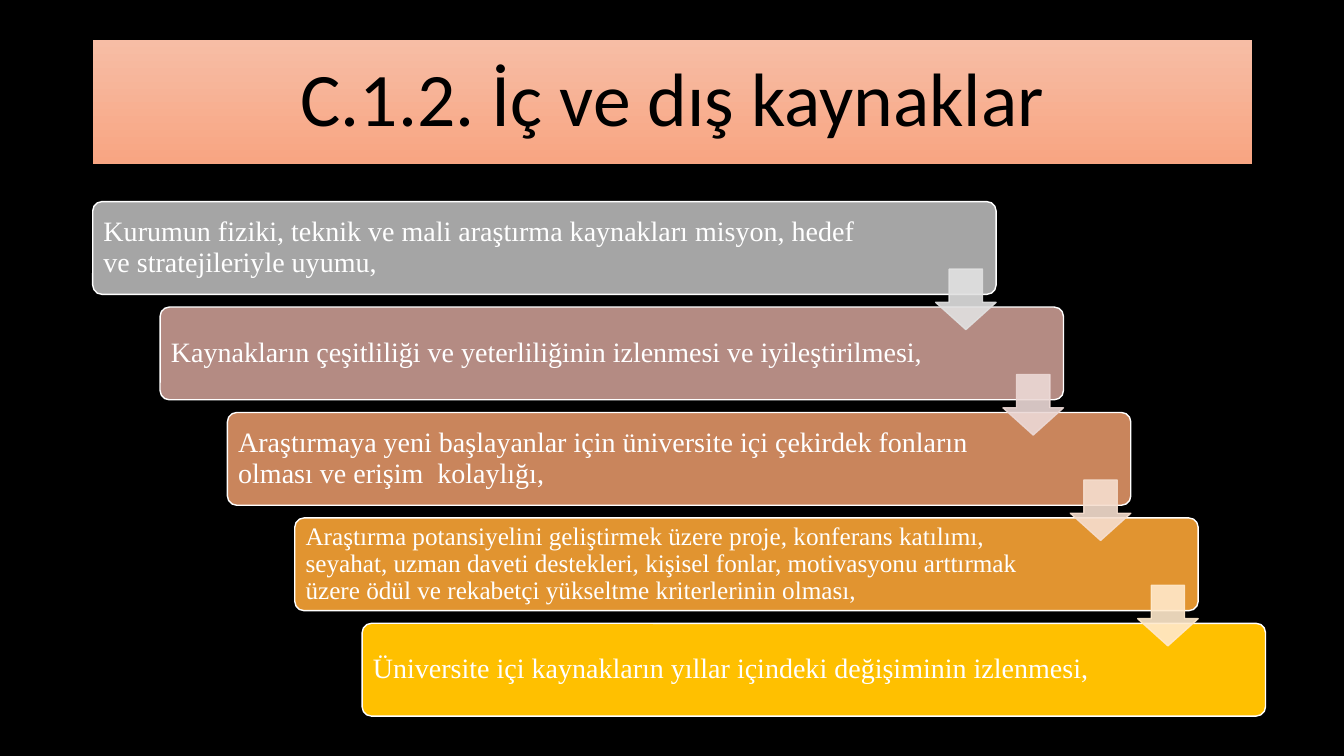
"""Build a slide with a staircase of five cards linked by down arrows."""
from lxml.etree import SubElement
from pptx import Presentation
from pptx.dml.color import RGBColor
from pptx.enum.shapes import MSO_SHAPE as Shape
from pptx.enum.text import MSO_ANCHOR as Anchor, MSO_AUTO_SIZE as AutoSize, PP_ALIGN as Align
from pptx.oxml.ns import qn
from pptx.util import Inches, Pt

TITLE = "C.1.2. İç ve dış kaynaklar"
CARDS = [
    ("Kurumun fiziki, teknik ve mali araştırma kaynakları misyon, hedef ve stratejileriyle uyumu,", "body"),
    ("Kaynakların çeşitliliği ve yeterliliğinin izlenmesi ve iyileştirilmesi,", "body"),
    ("Araştırmaya yeni başlayanlar için üniversite içi çekirdek fonların olması ve erişim  kolaylığı,", "body"),
    ("Araştırma potansiyelini geliştirmek üzere proje, konferans katılımı, seyahat, uzman daveti destekleri, "
     "kişisel fonlar, motivasyonu arttırmak üzere ödül ve rekabetçi yükseltme kriterlerinin olması,", "small"),
    ("Üniversite içi kaynakların yıllar içindeki değişiminin izlenmesi,", "body"),
]
THEME = {
    "background": "000000", "title_text": "000000", "card_text": "FFFFFF", "outline": "FFFFFF",
    "title_gradient": ("F7BDA5", "F8A582"),
    "cards": ("A5A5A5", "B48B83", "C9855C", "E19430", "FFC000"),
    "arrows": ("E1E1E1", "ECD9D6", "F6DECF", "FFE9CB"),
    "arrow_opacity": 90,
    "title_font": "Calibri", "card_font": "Times New Roman",
    "sizes": {"title": 54, "body": 20, "small": 18},
}
SLIDE_WIDTH, SLIDE_HEIGHT = 13.33, 7.5
TITLE_BOX = (0.92, 0.4, 11.5, 1.23)
LEFT, TOP = 0.92, 2
CARD_WIDTH, CARD_HEIGHT = 8.96, 0.92
STEP_X, STEP_Y = 0.668, 1.046
ARROW_SIZE, ARROW_DROP = 0.6, 0.67
CARD_MARGINS = {"margin_left": 0.08, "margin_right": 1.34, "margin_top": 0.05, "margin_bottom": 0.05}


def rgb(value):
    """Turn a hex string into a colour."""
    return RGBColor.from_string(value)


def apply_format(target, values):
    """Set every attribute named in a dict."""
    for name, value in values.items():
        setattr(target, name, value)


def write_text(shape, text, size, font, color, align, margins):
    """Put one formatted paragraph into a shape."""
    frame = shape.text_frame
    frame.text = text
    apply_format(frame, {"word_wrap": True, "auto_size": AutoSize.NONE, "vertical_anchor": Anchor.MIDDLE})
    apply_format(frame, {name: Inches(value) for name, value in margins.items()})
    paragraph = frame.paragraphs[0]
    apply_format(paragraph, {"alignment": align, "line_spacing": 0.9})
    run_font = paragraph.runs[0].font
    apply_format(run_font, {"size": Pt(THEME["sizes"][size]), "name": font})
    run_font.color.rgb = rgb(color)


def add_block(slide, kind, box, adjustments, fill, line):
    """Add a filled and outlined preset shape."""
    shape = slide.shapes.add_shape(kind, *map(Inches, box))
    for index, value in enumerate(adjustments):
        shape.adjustments[index] = value
    shape.shadow.inherit = False
    shape.fill.solid()
    shape.fill.fore_color.rgb = rgb(fill)
    shape.line.color.rgb = rgb(line)
    shape.line.width = Pt(1)
    return shape


def add_title(slide):
    """Format the title placeholder as a gradient banner."""
    title = slide.shapes.title
    apply_format(title, dict(zip(("left", "top", "width", "height"), map(Inches, TITLE_BOX))))
    title.fill.gradient()
    title.fill.gradient_angle = 270
    for stop, color in zip(title.fill.gradient_stops, THEME["title_gradient"]):
        stop.color.rgb = rgb(color)
    write_text(title, TITLE, "title", THEME["title_font"], THEME["title_text"], Align.CENTER, {})


def add_cards(slide):
    """Add the cards, each one step right of and below the last."""
    for index, ((text, size), fill) in enumerate(zip(CARDS, THEME["cards"])):
        box = (LEFT + index * STEP_X, TOP + index * STEP_Y, CARD_WIDTH, CARD_HEIGHT)
        card = add_block(slide, Shape.ROUNDED_RECTANGLE, box, [0.1], fill, THEME["outline"])
        write_text(card, text, size, THEME["card_font"], THEME["card_text"], Align.LEFT, CARD_MARGINS)


def add_arrows(slide):
    """Add a translucent arrow at the right end of every card but the last."""
    for index, color in enumerate(THEME["arrows"]):
        left = LEFT + index * STEP_X + CARD_WIDTH - ARROW_SIZE
        top = TOP + index * STEP_Y + ARROW_DROP
        arrow = add_block(slide, Shape.DOWN_ARROW, (left, top, ARROW_SIZE, ARROW_SIZE), [0.55, 0.45], color, color)
        for element in arrow.element.spPr.iter(qn("a:srgbClr")):
            SubElement(element, qn("a:alpha"), val=str(THEME["arrow_opacity"] * 1000))


def main():
    """Build and save the slide."""
    presentation = Presentation()
    apply_format(presentation, {"slide_width": Inches(SLIDE_WIDTH), "slide_height": Inches(SLIDE_HEIGHT)})
    slide = presentation.slides.add_slide(presentation.slide_layouts.get_by_name("Title Only"))
    slide.background.fill.solid()
    slide.background.fill.fore_color.rgb = rgb(THEME["background"])
    add_title(slide)
    add_cards(slide)
    add_arrows(slide)
    presentation.save("out.pptx")


if __name__ == "__main__":
    main()
